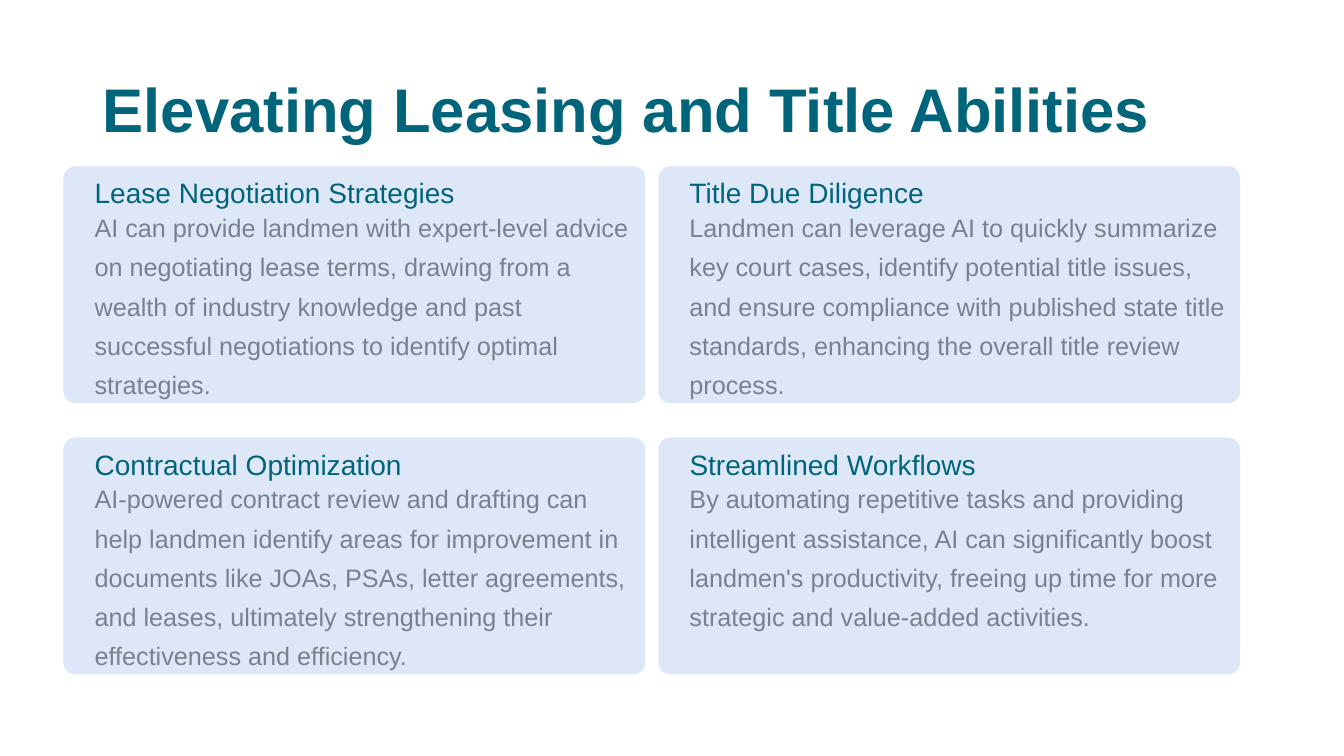
from pptx import Presentation
from pptx.dml.color import RGBColor
from pptx.enum.shapes import MSO_SHAPE
from pptx.enum.text import MSO_ANCHOR
from pptx.util import Emu, Pt

EMU_PER_PX = 9144  # 100 px to the inch
TEAL = RGBColor(0x00, 0x64, 0x7A)
GRAY = RGBColor(0x78, 0x81, 0x8C)
PALE_BLUE = RGBColor(0xDE, 0xE7, 0xF7)

# Heading, heading width, body, body lines
TOPICS = [
    ("Lease Negotiation Strategies", 408,
     "AI can provide landmen with expert-level advice on negotiating lease terms, "
     "drawing from a wealth of industry knowledge and past successful negotiations "
     "to identify optimal strategies.", 5),
    ("Title Due Diligence", 304,
     "Landmen can leverage AI to quickly summarize key court cases, identify potential "
     "title issues, and ensure compliance with published state title standards, "
     "enhancing the overall title review process.", 5),
    ("Contractual Optimization", 361,
     "AI-powered contract review and drafting can help landmen identify areas for "
     "improvement in documents like JOAs, PSAs, letter agreements, and leases, "
     "ultimately strengthening their effectiveness and efficiency.", 5),
    ("Streamlined Workflows", 341,
     "By automating repetitive tasks and providing intelligent assistance, AI can "
     "significantly boost landmen's productivity, freeing up time for more strategic "
     "and value-added activities.", 4),
]


def px(*lengths):
    return [Emu(length * EMU_PER_PX) for length in lengths]


class SlideBuilder:
    STYLES = {
        "title": {"size": Pt(44), "bold": True},
        "heading": {"size": Pt(20)},
        "body": {"size": Pt(18)},
    }
    COLORS = {"title": TEAL, "heading": TEAL, "body": GRAY}
    LINE_SPACING = {"title": 0.9, "heading": Pt(27.3), "body": Pt(28)}

    def __init__(self, slide):
        self.slide = slide

    def panel(self, left, top, width, height):
        panel = self.slide.shapes.add_shape(
            MSO_SHAPE.ROUNDED_RECTANGLE, *px(left, top, width, height))
        panel.adjustments[0] = 0.05
        panel.shadow.inherit = False
        panel.fill.solid()
        panel.fill.fore_color.rgb = PALE_BLUE
        panel.line.fill.background()

    def text(self, wording, style, left, top, width, height,
             wrap=True, anchor=MSO_ANCHOR.TOP):
        frame = self.slide.shapes.add_textbox(*px(left, top, width, height)).text_frame
        frame.word_wrap = wrap
        frame.vertical_anchor = anchor
        paragraph = frame.paragraphs[0]
        paragraph.line_spacing = self.LINE_SPACING[style]
        run = paragraph.add_run()
        run.text = wording
        for name, value in {"name": "Arial", **self.STYLES[style]}.items():
            setattr(run.font, name, value)
        run.font.color.rgb = self.COLORS[style]


def main():
    deck = Presentation()
    deck.slide_width, deck.slide_height = px(1333, 750)
    builder = SlideBuilder(deck.slides.add_slide(deck.slide_layouts[6]))

    # Title
    builder.text("Elevating Leasing and Title Abilities", "title",
                 92, 69, 1150, 85, anchor=MSO_ANCHOR.MIDDLE)

    # Two-by-two grid of topics
    for index, (heading, heading_width, body, lines) in enumerate(TOPICS):
        row, column = divmod(index, 2)
        left, top = 63 + 590 * column, 165 + 269 * row
        builder.panel(left, top, 577, 235)
        builder.text(heading, "heading", left + 21, top, heading_width, 38, wrap=False)
        builder.text(body, "body", left + 21, top + 32, 556, 39 * lines)

    deck.save("out.pptx")


if __name__ == "__main__":
    main()
